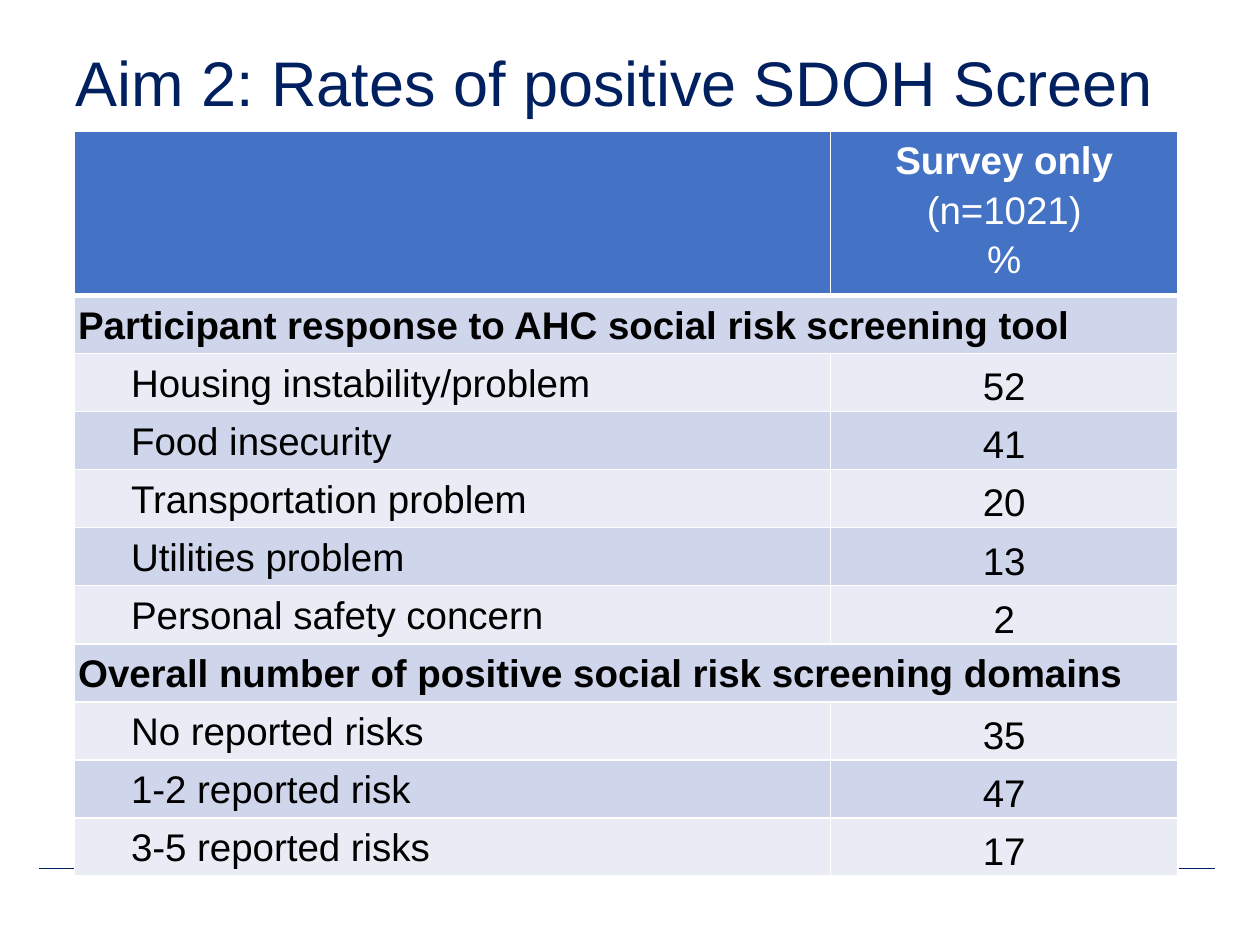
import pptx
import pptx.dml.color
import pptx.enum.shapes
import pptx.enum.text
import pptx.oxml
import pptx.oxml.ns
import pptx.util
from lxml import etree

Inches, Pt = pptx.util.Inches, pptx.util.Pt
ALIGN, ANCHOR = pptx.enum.text.PP_ALIGN, pptx.enum.text.MSO_ANCHOR
SLIDE_W, SLIDE_H = 10, 7.5
NAVY, BLUE, WHITE, BLACK = "002060", "4472C4", "FFFFFF", "000000"
BANDS = ("CFD5EA", "E9EBF5")
HEADER_H, ROW_H = 1.23, 0.45
LABEL_SHARE = 0.685
LABEL_INDENT = 0.42
SECTIONS = [
    ("Participant response to AHC social risk screening tool", [
        ("Housing instability/problem", 52),
        ("Food insecurity", 41),
        ("Transportation problem", 20),
        ("Utilities problem", 13),
        ("Personal safety concern", 2),
    ]),
    ("Overall number of positive social risk screening domains", [
        ("No reported risks", 35),
        ("1-2 reported risk", 47),
        ("3-5 reported risks", 17),
    ]),
]


def color(hex_code):
    return pptx.dml.color.RGBColor.from_string(hex_code)


def write(paragraph, text, size=22, ink=BLACK, bold=False, align=ALIGN.LEFT,
          spacing=1.15, indent=0):
    """Append a run to the paragraph and format both."""
    paragraph.alignment = align
    paragraph.line_spacing = spacing
    if indent:
        paragraph._p.get_or_add_pPr().set("marL", str(Inches(indent)))
    run = paragraph.add_run()
    run.text = text
    run.font.name = "Arial"
    run.font.size = Pt(size)
    run.font.bold = bold
    run.font.color.rgb = color(ink)


def style_cell(cell, fill, top=1, bottom=1, anchor=ANCHOR.TOP):
    cell.margin_left = cell.margin_right = Inches(0.03)
    cell.margin_top = cell.margin_bottom = Inches(0.02)
    cell.vertical_anchor = anchor
    cell.fill.solid()
    cell.fill.fore_color.rgb = color(fill)
    properties = cell._tc.get_or_add_tcPr()
    sides = (("lnL", 1), ("lnR", 1), ("lnT", top), ("lnB", bottom))
    for place, (side, width) in enumerate(sides):
        border = etree.Element(pptx.oxml.ns.qn(f"a:{side}"), w=str(Pt(width)))
        solid = etree.SubElement(border, pptx.oxml.ns.qn("a:solidFill"))
        etree.SubElement(solid, pptx.oxml.ns.qn("a:srgbClr"), val=WHITE)
        properties.insert(place, border)


def add_title(slide, left, top, width, height):
    frame = slide.shapes.add_textbox(
        Inches(left), Inches(top), Inches(width), Inches(height)).text_frame
    frame.word_wrap = True
    frame.vertical_anchor = ANCHOR.BOTTOM
    write(frame.paragraphs[0], "Aim 2: Rates of positive SDOH Screen",
          size=36, ink=NAVY, spacing=0.9)


def add_footer_rule(slide, left, top, width):
    rule = slide.shapes.add_connector(
        pptx.enum.shapes.MSO_CONNECTOR.STRAIGHT,
        Inches(left), Inches(top), Inches(left + width), Inches(top))
    rule.line.color.rgb = color(NAVY)
    rule.line.width = Pt(0.5)
    etree.SubElement(rule._element.spPr, pptx.oxml.ns.qn("a:effectLst"))


def fill_header(row):
    for cell in row.cells:
        style_cell(cell, BLUE, bottom=3)
    frame = row.cells[1].text_frame
    heading = dict(ink=WHITE, align=ALIGN.CENTER)
    write(frame.paragraphs[0], "Survey only ", bold=True, **heading)
    write(frame.paragraphs[0], "(n=1021)", **heading)
    write(frame.add_paragraph(), "%", **heading)


def add_rates_table(slide, left, top, width):
    entries = []
    for section, rates in SECTIONS:
        entries += [(section, None)] + rates
    height = HEADER_H + ROW_H * len(entries)
    table = slide.shapes.add_table(
        len(entries) + 1, 2, Inches(left), Inches(top),
        Inches(width), Inches(height)).table
    table.first_row = table.horz_banding = False
    for column, share in zip(table.columns, (LABEL_SHARE, 1 - LABEL_SHARE)):
        column.width = Inches(width * share)
    for row in table.rows:
        row.height = Inches(ROW_H)
    table.rows[0].height = Inches(HEADER_H)
    fill_header(table.rows[0])

    for index, (label, rate) in enumerate(entries):
        label_cell, rate_cell = table.rows[index + 1].cells
        for cell, anchor in ((label_cell, ANCHOR.TOP), (rate_cell, ANCHOR.BOTTOM)):
            style_cell(cell, BANDS[index % 2], top=1 if index else 3, anchor=anchor)
        is_section = rate is None
        write(label_cell.text_frame.paragraphs[0], label, bold=is_section,
              indent=0 if is_section else LABEL_INDENT)
        if is_section:
            label_cell.merge(rate_cell)
        else:
            write(rate_cell.text_frame.paragraphs[0], str(rate), align=ALIGN.CENTER)


def main():
    deck = pptx.Presentation()
    deck.slide_width, deck.slide_height = Inches(SLIDE_W), Inches(SLIDE_H)
    slide = deck.slides.add_slide(deck.slide_layouts[6])
    add_title(slide, 0.05 * SLIDE_W, 0.33, 0.894 * SLIDE_W, 0.67)
    add_footer_rule(slide, 0.031 * SLIDE_W, 6.89, 0.933 * SLIDE_W)
    add_rates_table(slide, 0.059 * SLIDE_W, 1.04, 0.876 * SLIDE_W)
    deck.save("out.pptx")


if __name__ == "__main__":
    main()
